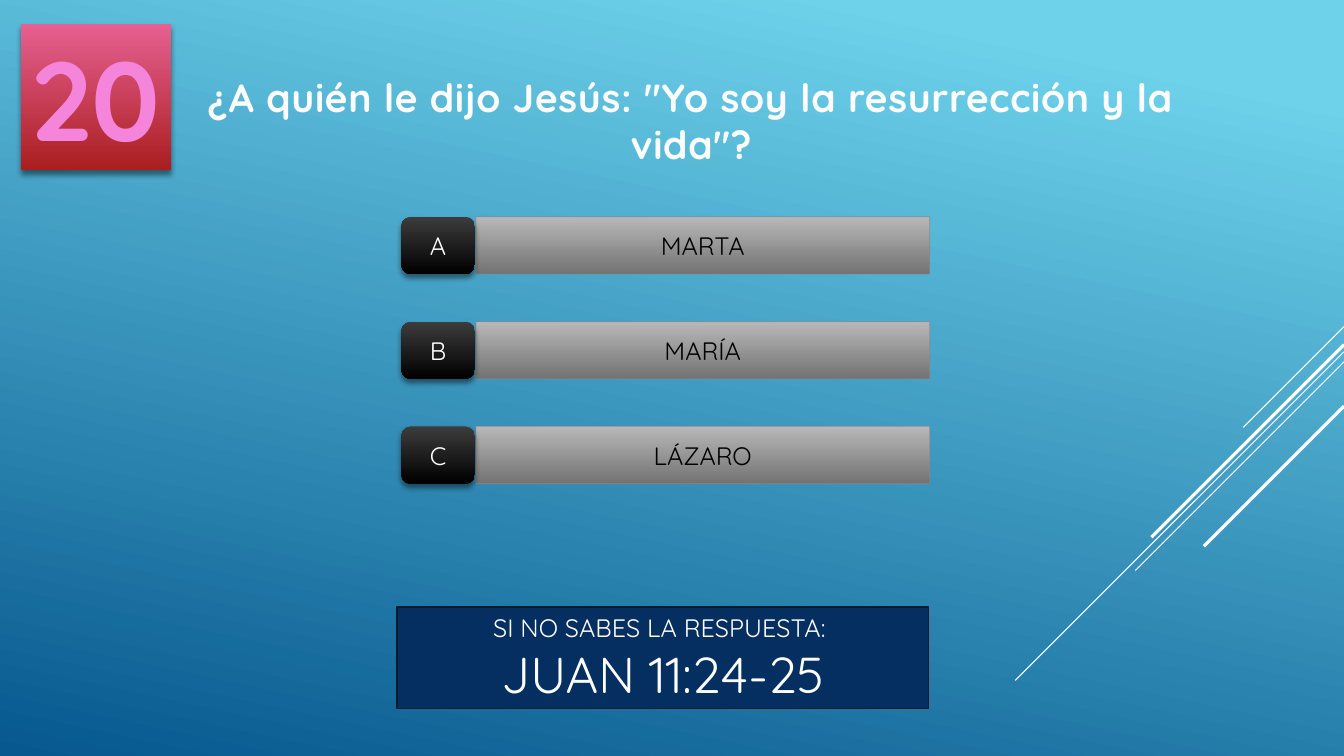
from lxml import etree
from pptx import Presentation
from pptx import util as u
from pptx.dml.color import RGBColor
from pptx.enum import shapes, text
from pptx.oxml import ns

WIDTH, HEIGHT = 13.33, 7.5
FONT = "Quicksand"
NUMBER = "20"
QUESTION = '¿A quién le dijo Jesús: "Yo soy la resurrección y la vida"?'
ANSWERS = [("A", "MARTA"), ("B", "MARÍA"), ("C", "LÁZARO")]
HINT = [("SI NO SABES LA RESPUESTA: ", 18), ("JUAN 11:24-25", 36)]
DIAGONALS = [(3.24, 1, 0.75), (3.49, 3.26, 0.75), (3.59, 2.07, 0.75),
             (3.42, 1.91, 2.25), (4.03, 1.39, 2.25)]
SKY = ("6ED2EB", "06588E")
BAR = ("B8B8B8", "737373")
KEY = ("3C3C3C", "000000")
BADGE = ("E66091", "AA1E1F")
FIRST_ROW, ROW_PITCH, ROW_HEIGHT = 2.15, 1.04, 0.57
KEY_LEFT, KEY_WIDTH, BAR_LEFT, BAR_WIDTH = 3.98, 0.73, 4.72, 4.5


def color(value):
    return RGBColor.from_string(value)


def paint(fill, colors, angle=90, start=0):
    if isinstance(colors, str):
        fill.solid()
        fill.fore_color.rgb = color(colors)
        return
    fill.gradient()
    fill.gradient_angle = 360 - angle
    for stop, value, position in zip(fill.gradient_stops, colors, (start, 1)):
        stop.color.rgb = color(value)
        stop.position = position


def child(parent, tag, **attributes):
    return etree.SubElement(parent, ns.qn(tag), attributes)


def cast_shadow(effects):
    shadow = child(effects, "a:outerShdw", blurRad=str(u.Pt(4)), dist=str(u.Pt(3)),
                   dir="5400000", rotWithShape="0")
    child(child(shadow, "a:srgbClr", val="000000"), "a:alpha", val="46000")


def write(shape, lines, ink, bold=False, anchor=text.MSO_ANCHOR.MIDDLE):
    frame = shape.text_frame
    frame.word_wrap = True
    frame.vertical_anchor = anchor
    for index, (words, size) in enumerate(lines):
        para = frame.add_paragraph() if index else frame.paragraphs[0]
        para.alignment = text.PP_ALIGN.CENTER
        span = para.add_run()
        span.text = words
        span.font.size = u.Pt(size)
        span.font.name = FONT
        span.font.bold = bold
        span.font.color.rgb = color(ink)


def add_block(page, kind, place, colors, line=None, shadow=False):
    shape = page.shapes.add_shape(kind, *map(u.Inches, place))
    shape.shadow.inherit = False
    paint(shape.fill, colors)
    if line:
        shape.line.color.rgb = color(line[0])
        shape.line.width = u.Pt(line[1])
    else:
        shape.line.fill.background()
    if shadow:
        cast_shadow(shape._element.spPr.find(ns.qn("a:effectLst")))
    return shape


def add_diagonals(page):
    for top, reach, weight in DIAGONALS:
        ends = (WIDTH, top, WIDTH - reach, top + reach)
        line = page.shapes.add_connector(shapes.MSO_CONNECTOR.STRAIGHT, *map(u.Inches, ends))
        line.line.color.rgb = color("FFFFFF")
        line.line.width = u.Pt(weight)
        child(line._element.spPr, "a:effectLst")


def add_question(page):
    box = page.shapes.add_textbox(*map(u.Inches, (1.51, 0.68, 10.69, 1.04)))
    write(box, [(QUESTION, 28)], "FEFEFE", True, text.MSO_ANCHOR.TOP)
    style = box.text_frame.paragraphs[0].runs[0].font._element
    style.set("spc", "50")
    effects = child(style, "a:effectLst")
    cast_shadow(effects)
    style.find(ns.qn("a:solidFill")).addnext(effects)


def add_answers(page):
    rows = [FIRST_ROW + index * ROW_PITCH for index in range(len(ANSWERS))]
    for top, (letter, answer) in zip(rows, ANSWERS):
        bar = add_block(page, shapes.MSO_SHAPE.RECTANGLE,
                        (BAR_LEFT, top, BAR_WIDTH, ROW_HEIGHT), BAR, ("898989", 0.75))
        edge = bar.line.fill._xPr.find(".//" + ns.qn("a:srgbClr"))
        child(edge, "a:alpha", val="60000")
        write(bar, [(answer, 18)], "000000")
        key = add_block(page, shapes.MSO_SHAPE.ROUNDED_RECTANGLE,
                        (KEY_LEFT, top, KEY_WIDTH, ROW_HEIGHT), KEY, shadow=True)
        write(key, [(letter, 18)], "FFFFFF")


def main():
    deck = Presentation()
    deck.slide_width, deck.slide_height = u.Inches(WIDTH), u.Inches(HEIGHT)
    page = deck.slides.add_slide(deck.slide_layouts[6])
    paint(page.background.fill, SKY, 102, 0.1)
    add_diagonals(page)
    add_question(page)
    add_answers(page)
    hint = add_block(page, shapes.MSO_SHAPE.RECTANGLE, (3.94, 6.02, 5.27, 1.01),
                     "052F61", ("021E2B", 1.25))
    write(hint, HINT, "FFFFFF")
    badge = add_block(page, shapes.MSO_SHAPE.RECTANGLE, (0.21, 0.24, 1.49, 1.45),
                      BADGE, shadow=True)
    write(badge, [(NUMBER, 80)], "F585DB", True, text.MSO_ANCHOR.TOP)
    deck.save("out.pptx")


if __name__ == "__main__":
    main()
